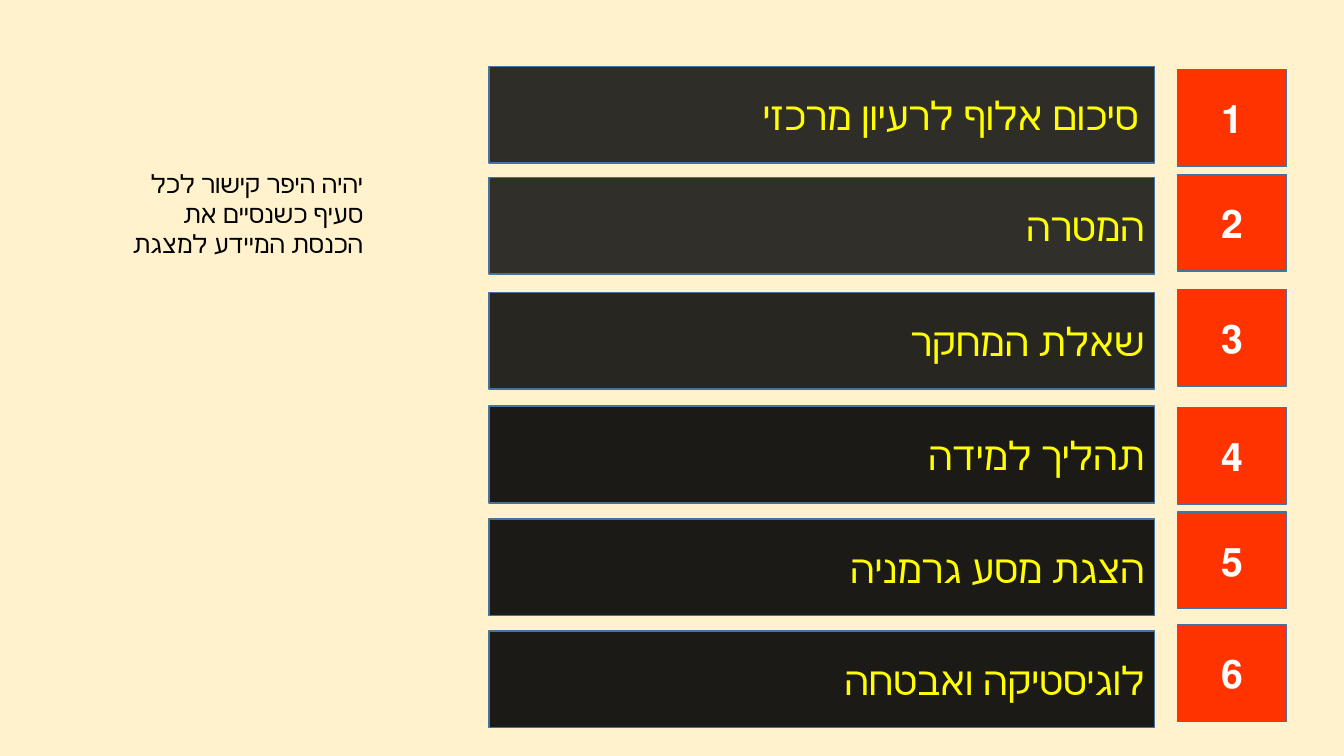
from dataclasses import dataclass

from lxml import etree
from pptx import Presentation
from pptx.dml.color import RGBColor
from pptx.enum import shapes, text
from pptx.oxml.ns import qn
from pptx.util import Inches, Pt


@dataclass(frozen=True)
class Theme:
    font: str = "Calibri"
    background: str = "FFF2CC"
    outline: str = "43739E"
    number_fill: str = "FF3300"
    number_text: str = "FFFFFF"
    bar_text: str = "FFFF00"
    note_text: str = "000000"
    agenda_size: int = 28
    note_size: int = 18


theme = Theme()


def write(shape, words, alignment, **font_values):
    """Put one right-to-left paragraph into a shape."""
    shape.text_frame.word_wrap = True
    paragraph = shape.text_frame.paragraphs[0]
    paragraph.alignment = alignment
    paragraph._p.get_or_add_pPr().set("rtl", "1")
    run = paragraph.add_run()
    run.text = words
    color = font_values.pop("color")
    run.font.color.rgb = RGBColor.from_string(color)
    for name, value in {"name": theme.font, **font_values}.items():
        setattr(run.font, name, value)


def add_box(left, top, width, fill, opacity=100):
    """Draw an outlined agenda rectangle."""
    shape = slide.shapes.add_shape(
        shapes.MSO_SHAPE.RECTANGLE,
        Inches(left), Inches(top), Inches(width), Inches(0.96))
    shape.shadow.inherit = False
    shape.fill.solid()
    shape.fill.fore_color.rgb = RGBColor.from_string(fill)
    if opacity < 100:
        color = shape._element.spPr.find(qn("a:solidFill"))[0]
        etree.SubElement(color, qn("a:alpha")).set("val", str(opacity * 1000))
    shape.line.color.rgb = RGBColor.from_string(theme.outline)
    shape.line.width = Pt(1)
    shape.text_frame.vertical_anchor = text.MSO_ANCHOR.MIDDLE
    return shape


# Slide and background
presentation = Presentation()
presentation.slide_width = Inches(13.33)
presentation.slide_height = Inches(7.5)
slide = presentation.slides.add_slide(presentation.slide_layouts[6])
slide.background.fill.solid()
slide.background.fill.fore_color.rgb = RGBColor.from_string(theme.background)

# Agenda: wording, bar top, number top, bar fill, bar opacity, right inset
agenda = [
    ("סיכום אלוף לרעיון מרכזי", 0.66, 0.69, "0D0D0D", 86, 0.16),
    ("המטרה", 1.76, 1.73, "181717", 89, 0.1),
    ("שאלת המחקר", 2.9, 2.87, "0D0D0D", 89, 0.1),
    ("תהליך למידה", 4.03, 4.04, "000000", 89, 0.1),
    ("הצגת מסע גרמניה", 5.15, 5.08, "000000", 89, 0.1),
    ("לוגיסטיקה ואבטחה", 6.26, 6.2, "000000", 89, 0.1),
]
for number, (topic, bar_top, number_top, fill, opacity, inset) in enumerate(agenda, 1):
    bar = add_box(4.85, bar_top, 6.6, fill, opacity)
    bar.text_frame.margin_right = Inches(inset)
    write(bar, topic, text.PP_ALIGN.RIGHT,
          size=Pt(theme.agenda_size), color=theme.bar_text)
    square = add_box(11.68, number_top, 1.08, theme.number_fill)
    write(square, str(number), text.PP_ALIGN.CENTER,
          size=Pt(theme.agenda_size), color=theme.number_text, bold=True)

# Side note
note = slide.shapes.add_textbox(Inches(1.06), Inches(1.62), Inches(2.64), Inches(1.01))
note.text_frame.auto_size = text.MSO_AUTO_SIZE.SHAPE_TO_FIT_TEXT
write(note, "יהיה היפר קישור לכל סעיף כשנסיים את הכנסת המיידע למצגת",
      text.PP_ALIGN.RIGHT, size=Pt(theme.note_size), color=theme.note_text)

presentation.save("out.pptx")
